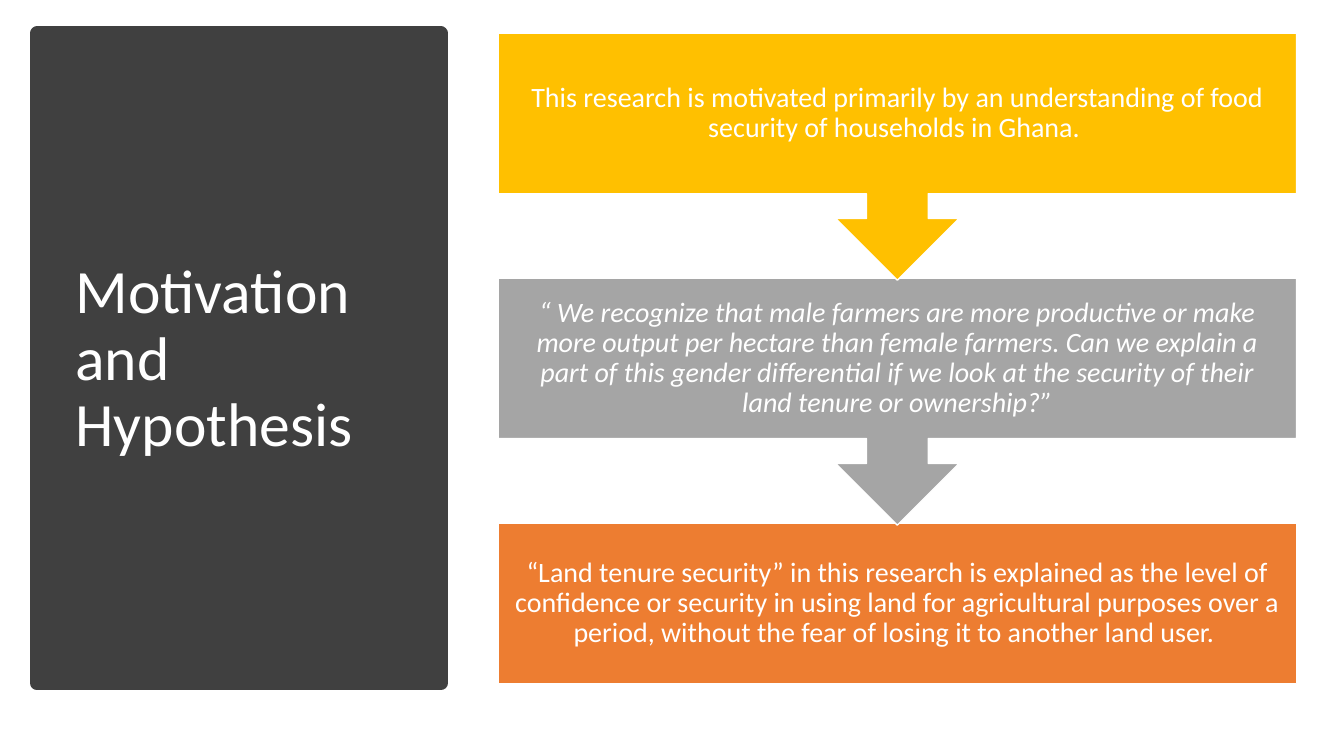
from pptx import Presentation
from pptx.dml.color import RGBColor
from pptx.enum.shapes import MSO_SHAPE as Kind
from pptx.enum.text import MSO_ANCHOR as Anchor, PP_ALIGN as Align
from pptx.util import Pt

# Content
TITLE = "Motivation and Hypothesis"
STEPS = [
    ("This research is motivated primarily by an understanding of food "
     "security of households in Ghana. ", "FFC000", False),
    ("“ We recognize that male farmers are more productive or make more "
     "output per hectare than female farmers. Can we explain a part of this "
     "gender differential if we look at the security of their land tenure "
     "or ownership?”", "A5A5A5", True),
    ("“Land tenure security” in this research is explained as the level of "
     "confidence or security in using land for agricultural purposes over a "
     "period, without the fear of losing it to another land user. ",
     "ED7D31", False),
]
WHITE, DARK = "FFFFFF", "404040"

# Layout in px, 100 to the inch
PX = 9144
SIZE = (1333, 750)
PANEL = (37, 33, 400, 645)
HEAD = (65, 70, 346, 575)
LEFT, TOP, WIDTH = 494, 33, 792
BOX, CALL, PITCH = 159, 245, 243
PAD = 16


def px(*nums):
    return [n * PX for n in nums]


def color(code):
    return RGBColor.from_string(code)


def block(kind, area, fill, edge, width):
    shape = slide.shapes.add_shape(kind, *px(*area))
    shape.shadow.inherit = False
    shape.fill.solid()
    shape.fill.fore_color.rgb = color(fill)
    shape.line.color.rgb = color(edge)
    shape.line.width = Pt(width)
    return shape


def write(shape, text, align, pad=None, **font):
    frame = shape.text_frame
    frame.word_wrap = True
    frame.vertical_anchor = Anchor.MIDDLE
    if pad is not None:
        for side in ("left", "top", "right", "bottom"):
            setattr(frame, f"margin_{side}", pad * PX)
    para = frame.paragraphs[0]
    para.alignment = align
    para.line_spacing = 0.9
    run = para.add_run()
    run.text = text
    run.font.color.rgb = color(WHITE)
    for name, value in {"name": "Calibri", **font}.items():
        setattr(run.font, name, value)


deck = Presentation()
deck.slide_width, deck.slide_height = px(*SIZE)
slide = deck.slides.add_slide(deck.slide_layouts[6])

# Title panel
block(Kind.RECTANGLE, PANEL, DARK, DARK, 10)
write(slide.shapes.add_textbox(*px(*HEAD)), TITLE, Align.LEFT, size=Pt(44))

# Steps, last one first so that each arrow tip lies over the next box
last = len(STEPS) - 1
for i, (text, fill, slant) in reversed(list(enumerate(STEPS))):
    kind, high = ((Kind.RECTANGLE, BOX) if i == last
                  else (Kind.DOWN_ARROW_CALLOUT, CALL))
    step = block(kind, (LEFT, TOP + i * PITCH, WIDTH, high), fill, WHITE, 1)
    write(step, text, Align.CENTER, PAD, size=Pt(20), italic=slant)

deck.save("out.pptx")
